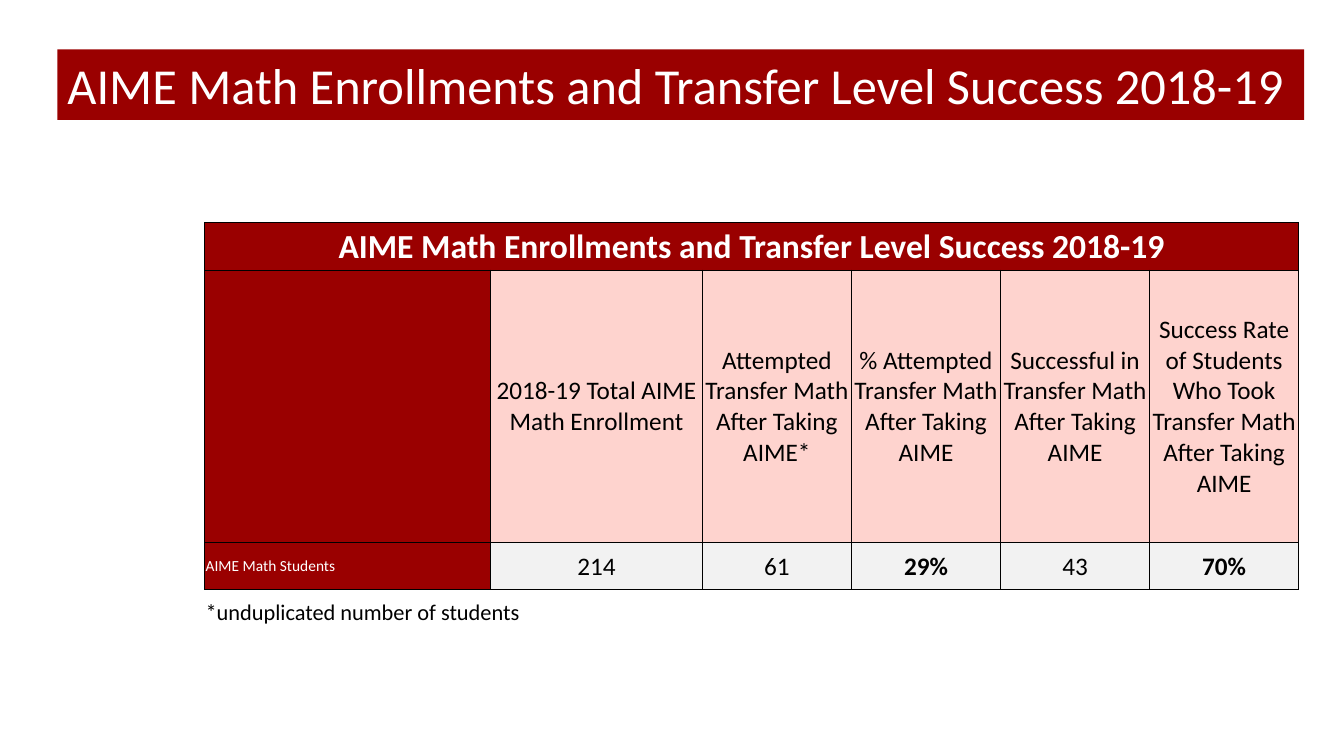
"""Build the slide on AIME math enrollments."""
from dataclasses import dataclass

from lxml import etree
from pptx import Presentation
from pptx.dml.color import RGBColor
from pptx.enum import text as t
from pptx.oxml import ns
from pptx.util import Pt


@dataclass(frozen=True)
class Theme:
    """Hold the colours, font and type sizes."""
    font: str = "Calibri"
    red: str = "9A0000"
    pink: str = "FED3CE"
    gray: str = "F2F2F2"
    white: str = "FFFFFF"
    black: str = "000000"
    title: int = 36
    head: int = 24
    body: int = 18
    note: int = 16
    label: int = 11


THEME = Theme()
TITLE = "AIME Math Enrollments and Transfer Level Success 2018-19"
HEADS = [
    "2018-19 Total AIME Math Enrollment",
    "Attempted Transfer Math After Taking AIME*",
    "% Attempted Transfer Math After Taking AIME",
    "Successful in Transfer Math After Taking AIME",
    "Success Rate of Students Who Took Transfer Math After Taking AIME",
]
VALUES = ["214", "61", "29%", "43", "70%"]
COLS = [204.3, 151.2] + [106.5] * 4
ROWS = [33.9, 194.4, 33.9, 32.4]


def write(frame, words, size, color, bold=False, center=False):
    """Put one styled paragraph in a text frame."""
    frame.text = words
    para = frame.paragraphs[0]
    para.alignment = t.PP_ALIGN.CENTER if center else t.PP_ALIGN.LEFT
    for run in para.runs:
        run.font.name = THEME.font
        run.font.size = Pt(size)
        run.font.bold = bold
        run.font.color.rgb = RGBColor.from_string(color)


def add_title(slide):
    """Place the title bar."""
    bar = slide.shapes.title
    bar.left, bar.top, bar.width, bar.height = Pt(41), Pt(35.3), Pt(890.6), Pt(50.4)
    bar.fill.solid()
    bar.fill.fore_color.rgb = RGBColor.from_string(THEME.red)
    frame = bar.text_frame
    frame.word_wrap = True
    frame.auto_size = t.MSO_AUTO_SIZE.NONE
    frame.vertical_anchor = t.MSO_ANCHOR.MIDDLE
    write(frame, TITLE, THEME.title, THEME.white)


def rule(cell, sides):
    """Draw black borders on the named sides and none on the others."""
    props = cell._tc.get_or_add_tcPr()
    for side in "LRTB":
        line = etree.SubElement(props, ns.qn(f"a:ln{side}"), w=str(Pt(1)))
        if side in sides:
            fill = etree.SubElement(line, ns.qn("a:solidFill"))
            etree.SubElement(fill, ns.qn("a:srgbClr"), val=THEME.black)
        else:
            etree.SubElement(line, ns.qn("a:noFill"))


def style(cell, fill, sides="LRTB"):
    """Set the insets, anchor, borders and fill of a cell."""
    cell.margin_left = cell.margin_right = cell.margin_top = Pt(0.7)
    cell.margin_bottom = 0
    cell.vertical_anchor = t.MSO_ANCHOR.MIDDLE
    rule(cell, sides)
    if fill:
        cell.fill.solid()
        cell.fill.fore_color.rgb = RGBColor.from_string(fill)
    else:
        cell.fill.background()


def add_grid(slide):
    """Build the enrollment table with its footnote row."""
    frame = slide.shapes.add_table(
        len(ROWS), len(COLS), Pt(146.2), Pt(159.1), Pt(sum(COLS)), Pt(sum(ROWS)))
    grid = frame.table
    grid.first_row = grid.horz_banding = False
    for col, width in zip(grid.columns, COLS):
        col.width = Pt(width)
    for row, height in zip(grid.rows, ROWS):
        row.height = Pt(height)

    fills = [THEME.red, THEME.pink, THEME.gray, None]
    for y, fill in enumerate(fills):
        for x in range(len(COLS)):
            shade = THEME.red if fill and x == 0 else fill
            style(grid.cell(y, x), shade, "LRTB" if fill else "T")
    grid.cell(0, 0).merge(grid.cell(0, 5))
    grid.cell(3, 0).merge(grid.cell(3, 1))

    write(grid.cell(0, 0).text_frame, TITLE, THEME.head, THEME.white, True, True)
    for x, (head, value) in enumerate(zip(HEADS, VALUES), 1):
        write(grid.cell(1, x).text_frame, head, THEME.body, THEME.black, center=True)
        write(grid.cell(2, x).text_frame, value, THEME.body, THEME.black,
              value.endswith("%"), True)
    write(grid.cell(2, 0).text_frame, "AIME Math Students", THEME.label, THEME.white)
    write(grid.cell(3, 0).text_frame, "*unduplicated number of students",
          THEME.note, THEME.black)


def main():
    """Create and save the deck."""
    deck = Presentation()
    deck.slide_width, deck.slide_height = Pt(960), Pt(540)
    slide = deck.slides.add_slide(deck.slide_layouts.get_by_name("Title Only"))
    add_title(slide)
    add_grid(slide)
    deck.save("out.pptx")


if __name__ == "__main__":
    main()
